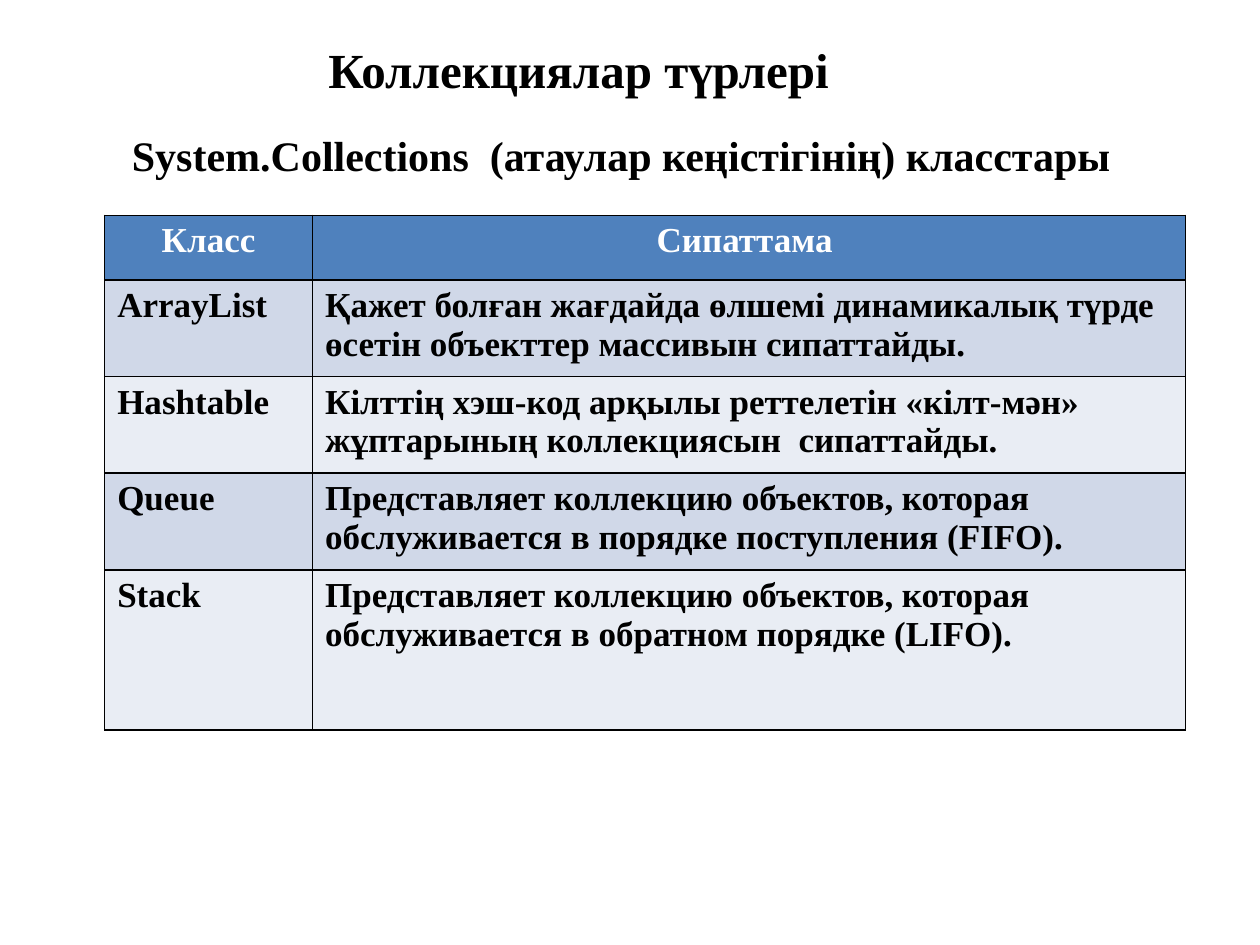
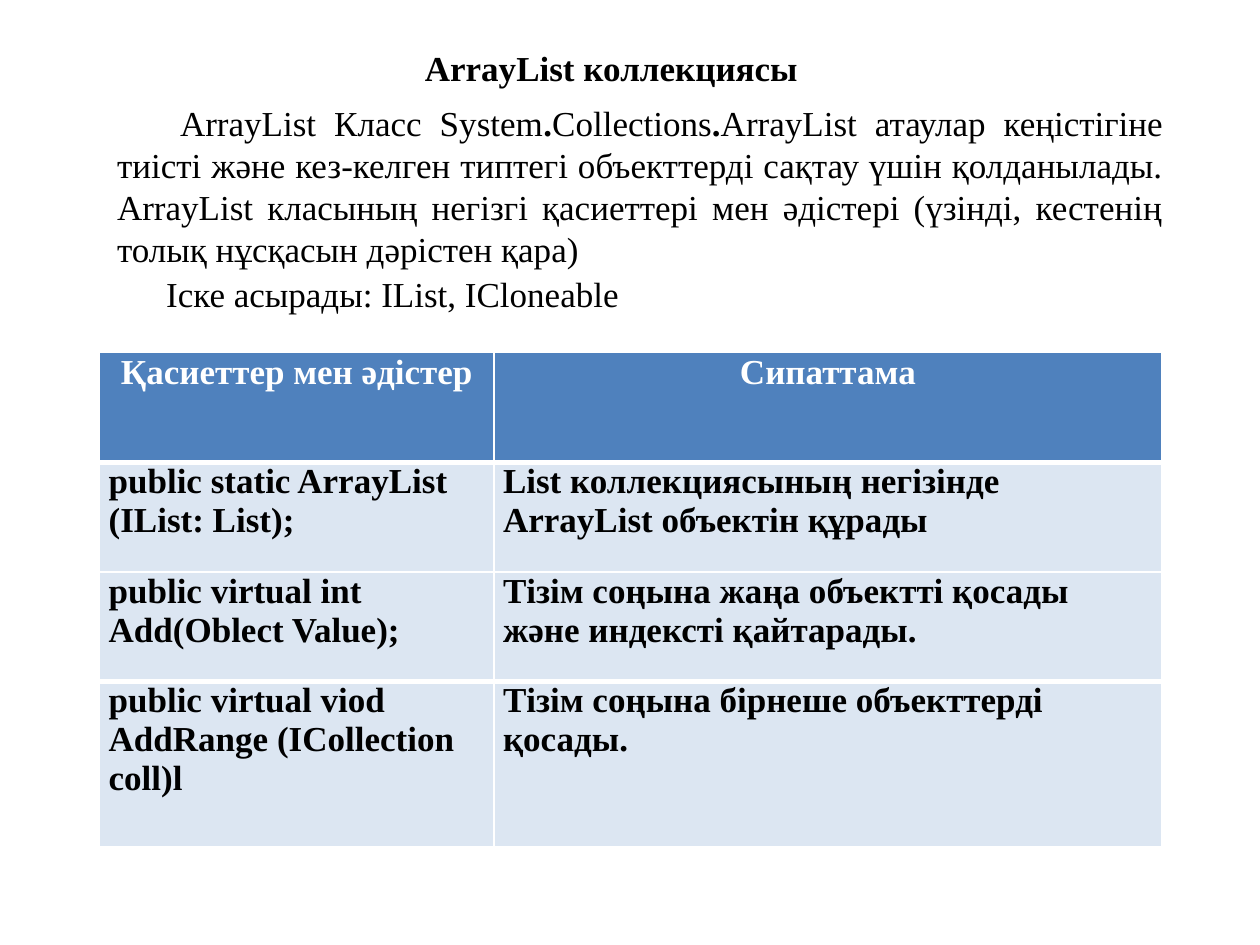
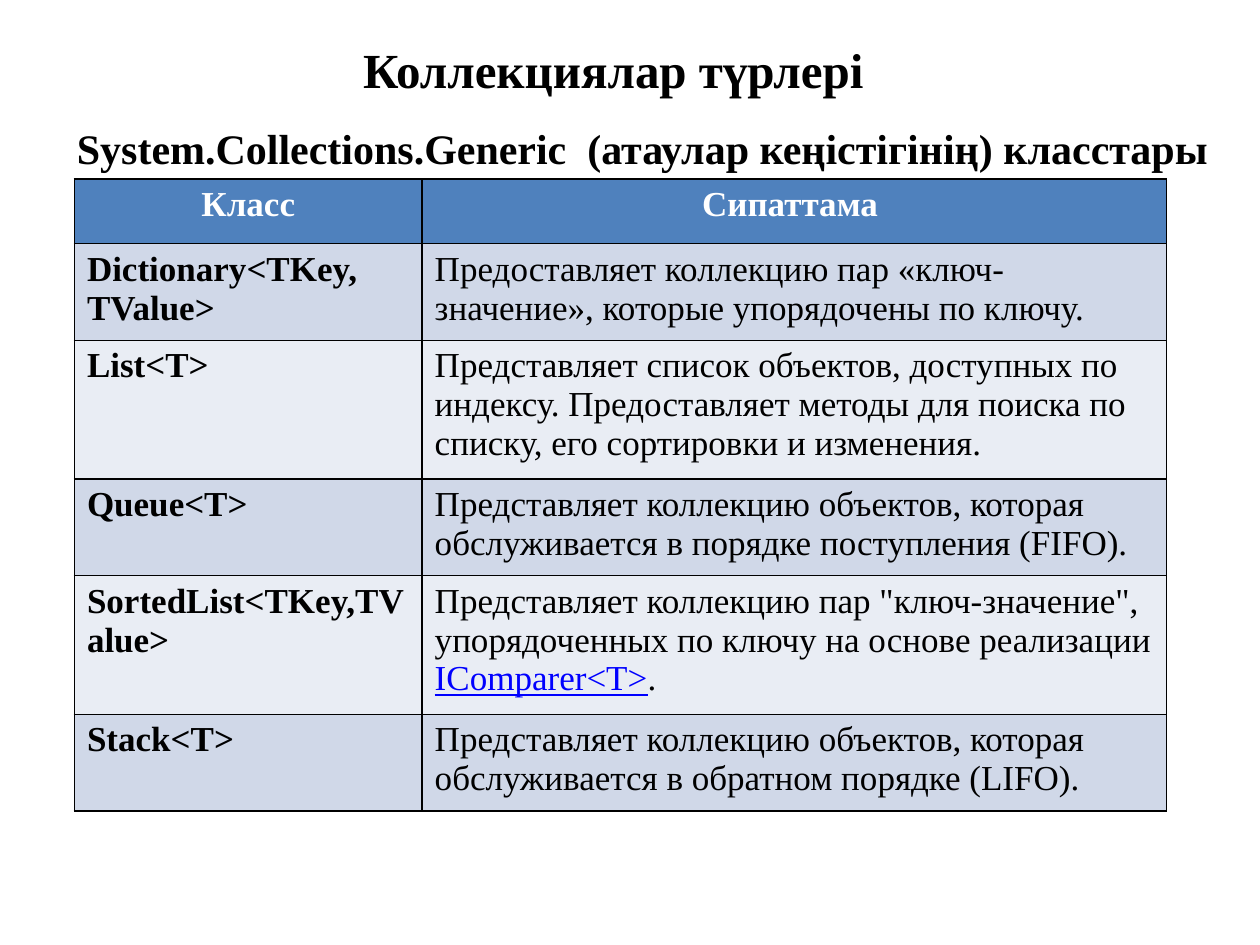
from dataclasses import dataclass, field
from typing import Any

from lxml.etree import SubElement
from pptx import Presentation
from pptx.dml.color import RGBColor
from pptx.enum.text import MSO_ANCHOR as Anchor, MSO_AUTO_SIZE as AutoSize, PP_ALIGN as Align
from pptx.oxml.ns import qn
from pptx.util import Cm, Pt

BLACK = RGBColor(0x00, 0x00, 0x00)
WHITE = RGBColor(0xFF, 0xFF, 0xFF)
HEADER_BLUE = RGBColor(0x4F, 0x81, 0xBD)
BAND_DARK = RGBColor(0xD0, 0xD8, 0xE8)
BAND_LIGHT = RGBColor(0xE9, 0xED, 0xF4)
METHOD_BLUE = RGBColor(0xDC, 0xE6, 0xF2)
LINK_BLUE = RGBColor(0x00, 0x00, 0xFF)
FONT_NAME = "Times New Roman"
FIRST_LINE_INDENT = Cm(1.27)
TITLE_ONLY_LAYOUT = 5


@dataclass(frozen=True)
class Run:
    text: str
    bold: bool = False
    underline: bool = False
    color: RGBColor = BLACK


@dataclass(frozen=True)
class TextBlock:
    left: float
    top: float
    width: float
    height: float
    runs: tuple[Run, ...]
    size: int = 20
    align: Align = Align.LEFT
    wrap: bool = True
    indented: bool = False


@dataclass(frozen=True)
class TableBlock:
    left: float
    top: float
    columns: tuple[float, ...]
    row_heights: tuple[float, ...]
    header: tuple[str, ...]
    rows: tuple[tuple[tuple[Run, ...], ...], ...]
    bands: tuple[RGBColor, ...] = (BAND_DARK, BAND_LIGHT)
    border: RGBColor = BLACK
    thick_edges: tuple[int, ...] = ()
    margins: dict[str, Any] = field(default_factory=dict)


@dataclass(frozen=True)
class SlideContent:
    title: TextBlock
    texts: tuple[TextBlock, ...]
    table: TableBlock


def bold(text: str) -> tuple[Run, ...]:
    """Return text as a single bold run."""
    return (Run(text, bold=True),)


def plain(text: str) -> tuple[Run, ...]:
    """Return text as a single regular run."""
    return (Run(text),)


def collection_title(width: float) -> TextBlock:
    """Return the title shared by the overview slides."""
    return TextBlock(0.89, 0.66, width, 1.45, bold("Коллекциялар түрлері "), 28, Align.CENTER)


def apply_format(target: Any, values: dict[str, Any]) -> None:
    """Set every named attribute on the target."""
    for name, value in values.items():
        setattr(target, name, value)


def write_runs(paragraph: Any, runs: tuple[Run, ...], size: int, align: Align) -> None:
    """Write formatted runs into a paragraph."""
    paragraph.alignment = align
    for content in runs:
        run = paragraph.add_run()
        run.text = content.text
        apply_format(run.font, {
            "name": FONT_NAME,
            "size": Pt(size),
            "bold": content.bold,
            "underline": content.underline,
        })
        run.font.color.rgb = content.color


def fill_text(shape: Any, block: TextBlock) -> None:
    """Place a text shape and write its content."""
    apply_format(shape, {name: Cm(getattr(block, name)) for name in ("left", "top", "width", "height")})
    frame = shape.text_frame
    apply_format(frame, {
        "word_wrap": block.wrap,
        "auto_size": AutoSize.SHAPE_TO_FIT_TEXT,
        "vertical_anchor": Anchor.TOP,
    })
    paragraph = frame.paragraphs[0]
    write_runs(paragraph, block.runs, block.size, block.align)
    if block.indented:
        paragraph._p.get_or_add_pPr().set("indent", str(FIRST_LINE_INDENT))


def set_borders(cell: Any, color: RGBColor, top: float, bottom: float) -> None:
    """Draw the four borders of a cell with widths in points."""
    properties = cell._tc.get_or_add_tcPr()
    for tag, width in {"a:lnL": 1, "a:lnR": 1, "a:lnT": top, "a:lnB": bottom}.items():
        line = SubElement(properties, qn(tag), w=str(Pt(width)))
        SubElement(SubElement(line, qn("a:solidFill")), qn("a:srgbClr"), val=str(color))


def add_table(slide: Any, block: TableBlock) -> None:
    """Add a table with a coloured header and banded rows."""
    header = tuple((Run(text, bold=True, color=WHITE),) for text in block.header)
    table = slide.shapes.add_table(
        len(block.row_heights), len(block.columns), Cm(block.left), Cm(block.top),
        Cm(sum(block.columns)), Cm(sum(block.row_heights)),
    ).table
    for column, width in zip(table.columns, block.columns):
        column.width = Cm(width)
    for row_index, contents in enumerate((header, *block.rows)):
        is_header = row_index == 0
        row = table.rows[row_index]
        row.height = Cm(block.row_heights[row_index])
        top, bottom = (3 if edge in block.thick_edges else 1 for edge in (row_index, row_index + 1))
        for cell, runs in zip(row.cells, contents):
            apply_format(cell, block.margins)
            set_borders(cell, block.border, top, bottom)
            cell.fill.solid()
            cell.fill.fore_color.rgb = (
                HEADER_BLUE if is_header else block.bands[(row_index - 1) % len(block.bands)]
            )
            write_runs(cell.text_frame.paragraphs[0], runs, 20, Align.CENTER if is_header else Align.LEFT)


def add_slide(presentation: Any, content: SlideContent) -> None:
    """Add a slide with its title, texts and table."""
    slide = presentation.slides.add_slide(presentation.slide_layouts[TITLE_ONLY_LAYOUT])
    fill_text(slide.shapes.title, content.title)
    add_table(slide, content.table)
    for block in content.texts:
        fill_text(slide.shapes.add_textbox(0, 0, 0, 0), block)


QUEUE_TEXT = "Представляет коллекцию объектов, которая обслуживается в порядке поступления (FIFO)."
STACK_TEXT = "Представляет коллекцию объектов, которая обслуживается в обратном порядке (LIFO)."
CLASS_HEADER = ("Класс", "Сипаттама ")

COLLECTIONS = SlideContent(
    title=collection_title(21.79),
    texts=(
        TextBlock(1.14, 2.49, 22.96, 1.27,
                  bold("System.Collections  (атаулар кеңістігінің) класстары"), 24, indented=True),
    ),
    table=TableBlock(
        2.11, 4.34, (4.19, 17.6), (1.3, 1.83, 1.83, 1.83, 3.23), CLASS_HEADER,
        (
            (bold("ArrayList"),
             bold("Қажет болған жағдайда өлшемі динамикалық түрде өсетін объекттер массивын сипаттайды.")),
            (bold("Hashtable"),
             bold("Кілттің хэш-код арқылы реттелетін «кілт-мән» жұптарының коллекциясын  сипаттайды.")),
            (bold("Queue"), bold(QUEUE_TEXT)),
            (bold("Stack"), bold(STACK_TEXT)),
        ),
    ),
)

ARRAY_LIST = SlideContent(
    title=TextBlock(8.31, 0.81, 8.1, 1.12, bold("ArrayList коллекциясы"), wrap=False),
    texts=(
        TextBlock(
            2.11, 1.93, 21.59, 3.68,
            (
                Run("ArrayList Класс System"),
                Run(".", bold=True),
                Run("Collections"),
                Run(".", bold=True),
                Run("ArrayList атаулар кеңістігіне тиісті және кез-келген типтегі объекттерді "
                    "сақтау үшін қолданылады. ArrayList класының негізгі қасиеттері мен әдістері "
                    "(үзінді, кестенің толық нұсқасын дәрістен қара)"),
            ),
            align=Align.JUSTIFY, indented=True,
        ),
        TextBlock(3.1, 5.36, 9.7, 1.12, plain("Іске асырады: IList, ICloneable"), wrap=False),
    ),
    table=TableBlock(
        2.01, 7.11, (7.95, 13.46), (2.21, 2.21, 2.21, 3.33), ("Қасиеттер мен әдістер", "Сипаттама"),
        (
            (bold("public static ArrayList (IList: List);"),
             bold("List коллекциясының негізінде ArrayList объектін құрады")),
            (bold("public virtual int Add(Oblect Value);"),
             bold("Тізім соңына жаңа объектті қосады және индексті қайтарады.")),
            (bold("public virtual viod AddRange (ICollection coll)l"),
             bold("Тізім соңына бірнеше объекттерді қосады.")),
        ),
        bands=(METHOD_BLUE,),
        border=WHITE,
        thick_edges=(1, 3),
        margins={
            "margin_left": Cm(0.18), "margin_right": Cm(0.18),
            "margin_top": Cm(0), "margin_bottom": Cm(0),
        },
    ),
)

GENERIC_COLLECTIONS = SlideContent(
    title=collection_title(23.19),
    texts=(
        TextBlock(1.3, 2.34, 23.55, 1.27,
                  bold("System.Collections.Generic  (атаулар кеңістігінің) класстары"), 24, wrap=False),
    ),
    table=TableBlock(
        1.5, 3.61, (7.01, 15.01), (1.3, 1.94, 2.79, 1.94, 2.79, 1.94), CLASS_HEADER,
        (
            (bold("Dictionary<TKey, TValue>"),
             plain("Предоставляет коллекцию пар «ключ-значение», которые упорядочены по ключу.")),
            (bold("List<T>"),
             plain("Представляет список объектов, доступных по индексу. Предоставляет методы "
                   "для поиска по списку, его сортировки и изменения.")),
            (bold("Queue<T>"), plain(QUEUE_TEXT)),
            (bold("SortedList<TKey,TValue>"),
             (
                 Run("Представляет коллекцию пар \"ключ-значение\", упорядоченных по ключу "
                     "на основе реализации "),
                 Run("IComparer<T>", underline=True, color=LINK_BLUE),
                 Run("."),
             )),
            (bold("Stack<T>"), plain(STACK_TEXT)),
        ),
    ),
)


def main() -> None:
    """Build the presentation and save it."""
    presentation = Presentation()
    apply_format(presentation, {"slide_width": Cm(25.4), "slide_height": Cm(19.05)})
    for content in (COLLECTIONS, ARRAY_LIST, GENERIC_COLLECTIONS):
        add_slide(presentation, content)
    presentation.save("out.pptx")


if __name__ == "__main__":
    main()
